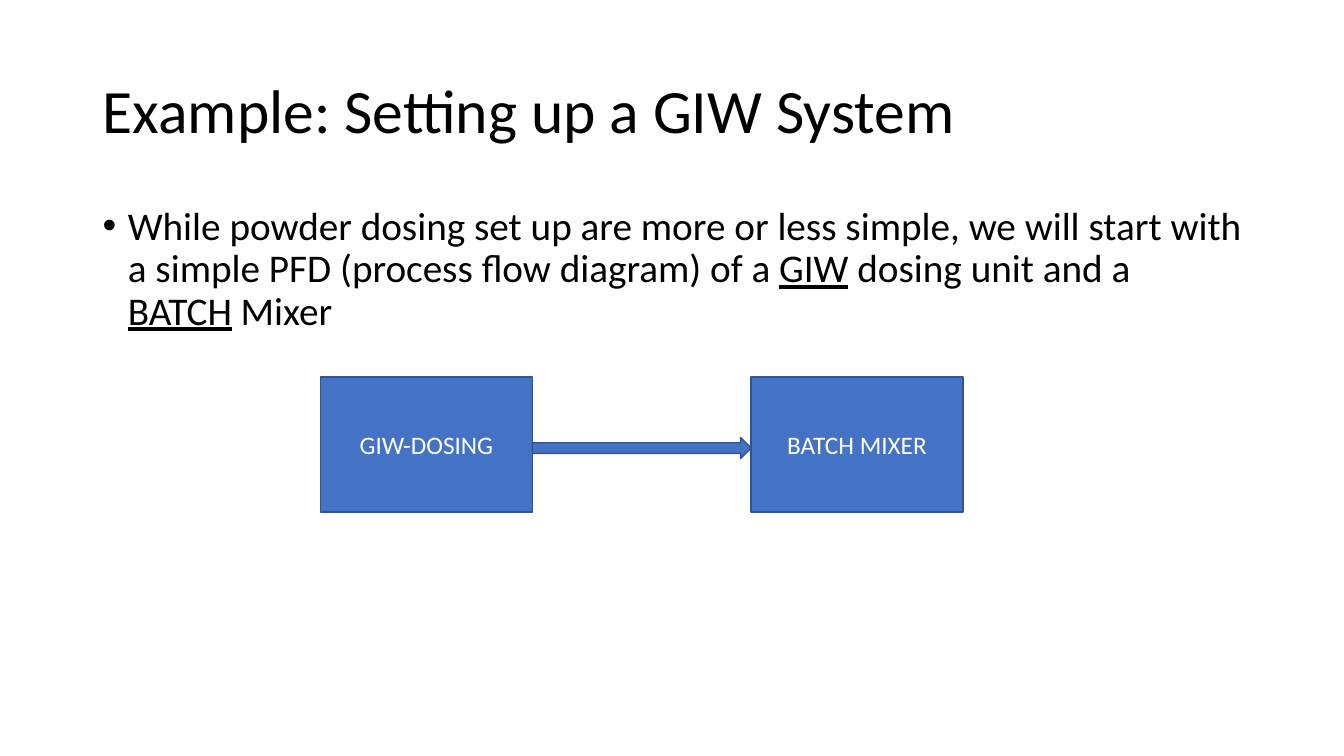
import dataclasses

import lxml.etree
import pptx
import pptx.dml.color
import pptx.enum.shapes
import pptx.enum.text
import pptx.oxml.ns
import pptx.util

PX = 9144
FONT = "Calibri"
BLACK, WHITE, BLUE, NAVY = "000000", "FFFFFF", "4472C4", "325491"
SHAPE = pptx.enum.shapes.MSO_SHAPE
ANCHOR = pptx.enum.text.MSO_ANCHOR
ALIGN = pptx.enum.text.PP_ALIGN


@dataclasses.dataclass
class Box:
    left: int
    top: int
    width: int
    height: int

    def emu(self) -> list[int]:
        return [v * PX for v in (self.left, self.top, self.width, self.height)]


@dataclasses.dataclass
class Block:
    box: Box
    kind: SHAPE
    label: str = ""


@dataclasses.dataclass
class Piece:
    text: str
    underline: bool = False


TITLE = [Piece("Example: Setting up a GIW System")]
BODY = [
    Piece("While powder dosing set up are more or less simple, we will start with "
          "a simple PFD (process flow diagram) of a "),
    Piece("GIW", True),
    Piece(" dosing unit and a "),
    Piece("BATCH", True),
    Piece(" Mixer"),
]
DOSING = Box(318, 374, 210, 134)
MIXER = Box(745, 374, 210, 134)
FLOW_LEFT = DOSING.left + DOSING.width
BLOCKS = [
    Block(DOSING, SHAPE.RECTANGLE, "GIW-DOSING"),
    Block(MIXER, SHAPE.RECTANGLE, "BATCH MIXER"),
    Block(Box(FLOW_LEFT, 434, MIXER.left - FLOW_LEFT, 21), SHAPE.RIGHT_ARROW),
]


def rgb(color: str) -> pptx.dml.color.RGBColor:
    return pptx.dml.color.RGBColor.from_string(color)


def set_font(p, size: int, color: str) -> None:
    p.font.name = FONT
    p.font.size = pptx.util.Pt(size)
    p.font.color.rgb = rgb(color)


def add_text(s, box: Box, pieces: list[Piece], size: int, anchor: ANCHOR):
    tf = s.shapes.add_textbox(*box.emu()).text_frame
    tf.word_wrap = True
    tf.vertical_anchor = anchor
    p = tf.paragraphs[0]
    p.line_spacing = 0.9
    set_font(p, size, BLACK)
    for piece in pieces:
        r = p.add_run()
        r.text = piece.text
        if piece.underline:
            r.font.underline = True
    return p


def add_bullet(p, indent: int) -> None:
    pPr = p._p.get_or_add_pPr()
    pPr.set("marL", str(indent * PX))
    pPr.set("indent", str(-indent * PX))
    qn = pptx.oxml.ns.qn
    font = lxml.etree.Element(qn("a:buFont"), typeface="Arial")
    char = lxml.etree.Element(qn("a:buChar"), char="•")
    defaults = pPr.find(qn("a:defRPr"))
    defaults.addprevious(font)
    defaults.addprevious(char)


def add_block(s, block: Block) -> None:
    sp = s.shapes.add_shape(block.kind, *block.box.emu())
    sp.shadow.inherit = False
    sp.fill.solid()
    sp.fill.fore_color.rgb = rgb(BLUE)
    sp.line.color.rgb = rgb(NAVY)
    sp.line.width = pptx.util.Pt(1)
    if block.label:
        tf = sp.text_frame
        tf.word_wrap = True
        tf.vertical_anchor = ANCHOR.MIDDLE
        p = tf.paragraphs[0]
        p.text = block.label
        p.alignment = ALIGN.CENTER
        set_font(p, 18, WHITE)


def main() -> None:
    """Build the slide on setting up a GIW system and save it."""
    prs = pptx.Presentation()
    prs.slide_width, prs.slide_height = 1333 * PX, 750 * PX
    s = prs.slides.add_slide(prs.slide_layouts[6])
    add_text(s, Box(92, 40, 1150, 145), TITLE, 44, ANCHOR.MIDDLE)
    p = add_text(s, Box(92, 200, 1150, 476), BODY, 28, ANCHOR.TOP)
    p.space_before = pptx.util.Pt(10)
    add_bullet(p, 25)
    for block in BLOCKS:
        add_block(s, block)
    prs.save("out.pptx")


if __name__ == "__main__":
    main()
